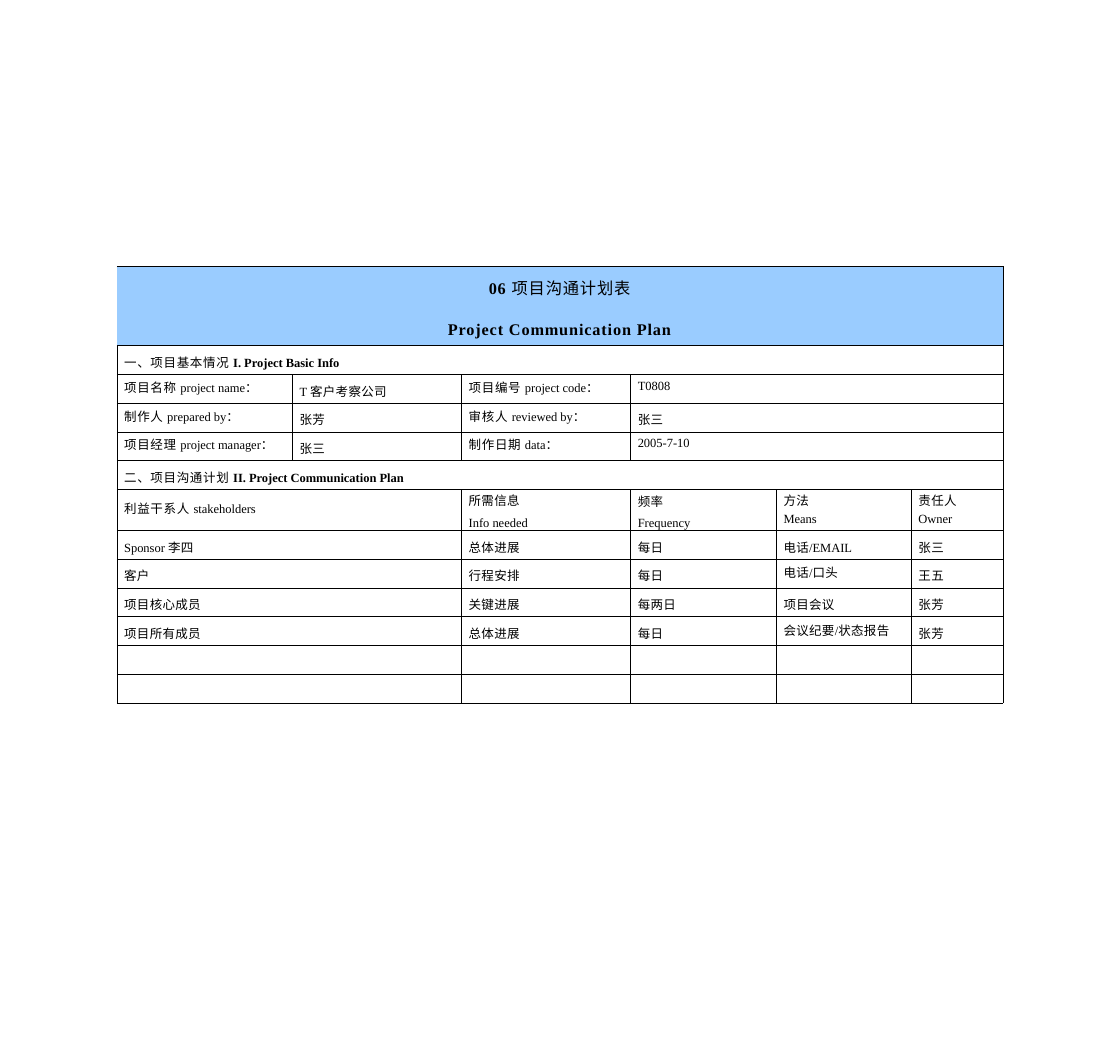
from dataclasses import dataclass

from lxml import etree
from pptx import Presentation
from pptx.dml.color import RGBColor
from pptx.enum.text import MSO_ANCHOR, PP_ALIGN
from pptx.oxml.ns import qn
from pptx.util import Inches, Pt

BLACK = RGBColor(0x00, 0x00, 0x00)
SKY = RGBColor(0x9A, 0xCC, 0xFF)
LATIN, CHINESE = "Times New Roman", "Noto Sans CJK SC"
TOP, LEFT, CENTER = MSO_ANCHOR.TOP, PP_ALIGN.LEFT, PP_ALIGN.CENTER
BLANK_LAYOUT = 6


@dataclass
class TextStyle:
    """Points for top, spacing and size; pitch is the height of later lines."""
    top: float
    spacing: float = 0.3
    bold: bool = False
    size: float = 10
    pitch: float = 14.3
    align: PP_ALIGN = LEFT


BANNER = TextStyle(7, 0.7, True, 13, 32, CENTER)
SECTION = TextStyle(6, 0.6, True)
LABEL = TextStyle(3, 0.6)
VALUE = TextStyle(6)
LATIN_VALUE = TextStyle(4, 0.1)
RAISED = TextStyle(3.5)
STAKEHOLDER_HEAD = TextStyle(7.5, 0.6)
HEAD = TextStyle(1)
INFO_HEAD = TextStyle(1, pitch=17.3)
FREQUENCY_HEAD = TextStyle(2, pitch=16)

COLUMNS = [1.95, 1.88, 1.88, 1.62, 1.5, 1.02]
BANNER_HEIGHT, ROW_HEIGHT, HEAD_HEIGHT = 0.88, 0.32, 0.45
FULL, FORM, PLAN = [6], [1, 1, 1, 3], [2, 1, 1, 1, 1]

# "|" parts Chinese runs from Latin ones.
ROWS = [
    (FULL, BANNER_HEIGHT, []),
    (FULL, ROW_HEIGHT, [("一、项目基本情况 |I. Project Basic Info", SECTION)]),
    (FORM, ROW_HEIGHT, [("项目名称 |project name|：", LABEL), ("T |客户考察公司", VALUE),
                        ("项目编号 |project code|：", LABEL), ("T0808", LATIN_VALUE)]),
    (FORM, ROW_HEIGHT, [("制作人 |prepared by|：", LABEL), ("张芳", VALUE),
                        ("审核人 |reviewed by|：", LABEL), ("张三", VALUE)]),
    (FORM, ROW_HEIGHT, [("项目经理 |project manager|：", LABEL), ("张三", VALUE),
                        ("制作日期 |data|：", LABEL), ("2005-7-10", LATIN_VALUE)]),
    (FULL, ROW_HEIGHT, [("二、项目沟通计划 |II. Project Communication Plan", SECTION)]),
    (PLAN, HEAD_HEIGHT, [("利益干系人 |stakeholders", STAKEHOLDER_HEAD),
                         ("所需信息\nInfo needed", INFO_HEAD),
                         ("频率\nFrequency", FREQUENCY_HEAD),
                         ("方法\nMeans", HEAD), ("责任人\nOwner", HEAD)]),
    (PLAN, ROW_HEIGHT, [("Sponsor |李四", VALUE), ("总体进展", VALUE), ("每日", VALUE),
                        ("电话|/EMAIL", VALUE), ("张三", VALUE)]),
    (PLAN, ROW_HEIGHT, [("客户", VALUE), ("行程安排", VALUE), ("每日", VALUE),
                        ("电话|/|口头", RAISED), ("王五", VALUE)]),
    (PLAN, ROW_HEIGHT, [("项目核心成员", VALUE), ("关键进展", VALUE), ("每两日", VALUE),
                        ("项目会议", VALUE), ("张芳", VALUE)]),
    (PLAN, ROW_HEIGHT, [("项目所有成员", VALUE), ("总体进展", VALUE), ("每日", VALUE),
                        ("会议纪要|/|状态报告", RAISED), ("张芳", VALUE)]),
    (PLAN, ROW_HEIGHT, []),
    (PLAN, ROW_HEIGHT, []),
]


class PlanSlide:
    def __init__(self, presentation):
        layout = presentation.slide_layouts[BLANK_LAYOUT]
        self.slide = presentation.slides.add_slide(layout)

    def add_grid(self, left, top, widths, heights, border, line_width):
        table = self.slide.shapes.add_table(
            len(heights), len(widths), Inches(left), Inches(top),
            Inches(sum(widths)), Inches(sum(heights))).table
        table.first_row = table.horz_banding = False
        for column, width in zip(table.columns, widths):
            column.width = Inches(width)
        for row, height in zip(table.rows, heights):
            row.height = Inches(height)
        for cell in table.iter_cells():
            cell.margin_left = cell.margin_right = 0
            cell.margin_top = cell.margin_bottom = 0
            cell.vertical_anchor = TOP
            self.set_borders(cell, border, line_width)
            cell.fill.background()
        return table

    def set_borders(self, cell, color, line_width):
        properties = cell._tc.get_or_add_tcPr()
        for side in ("a:lnL", "a:lnR", "a:lnT", "a:lnB"):
            line = etree.SubElement(properties, qn(side), w=str(Pt(line_width)))
            fill = etree.SubElement(line, qn("a:solidFill"))
            etree.SubElement(fill, qn("a:srgbClr"), val=str(color))

    def add_text(self, cell, text, style):
        cell.margin_top = Pt(style.top)
        if style.align == LEFT:
            cell.margin_left = Inches(0.08)
        frame = cell.text_frame
        for index, line in enumerate(text.split("\n")):
            paragraph = frame.add_paragraph() if index else frame.paragraphs[0]
            paragraph.alignment = style.align
            if index:
                paragraph.line_spacing = Pt(style.pitch)
            for part in line.split("|"):
                self.add_run(paragraph, part, style)

    def add_run(self, paragraph, text, style):
        is_latin = text.isascii()
        run = paragraph.add_run()
        run.text = text
        font = run.font
        font.name = LATIN if is_latin else CHINESE
        font.size = Pt(style.size)
        font.bold = style.bold and is_latin
        font.color.rgb = BLACK
        properties = run._r.get_or_add_rPr()
        etree.SubElement(properties, qn("a:ea"), typeface=CHINESE)
        if style is BANNER or not is_latin:
            properties.set("spc", str(round(style.spacing * 100)))


def main():
    presentation = Presentation()
    presentation.slide_width = Inches(12.45)
    presentation.slide_height = Inches(11.69)
    plan = PlanSlide(presentation)

    heights = [height for _, height, _ in ROWS]
    grid = plan.add_grid(1.3, 2.96, COLUMNS, heights, BLACK, 0.25)
    for row, (spans, _, entries) in enumerate(ROWS):
        starts = [sum(spans[:i]) for i in range(len(spans))]
        for start, span in zip(starts, spans):
            if span > 1:
                grid.cell(row, start).merge(grid.cell(row, start + span - 1))
        for start, (text, style) in zip(starts, entries):
            plan.add_text(grid.cell(row, start), text, style)

    banner = plan.add_grid(1.3, 2.97, [9.84], [0.86], SKY, 0.5).cell(0, 0)
    banner.fill.solid()
    banner.fill.fore_color.rgb = SKY
    plan.add_text(banner, "06 |项目沟通计划表\nProject Communication Plan", BANNER)

    presentation.save("out.pptx")


if __name__ == "__main__":
    main()
